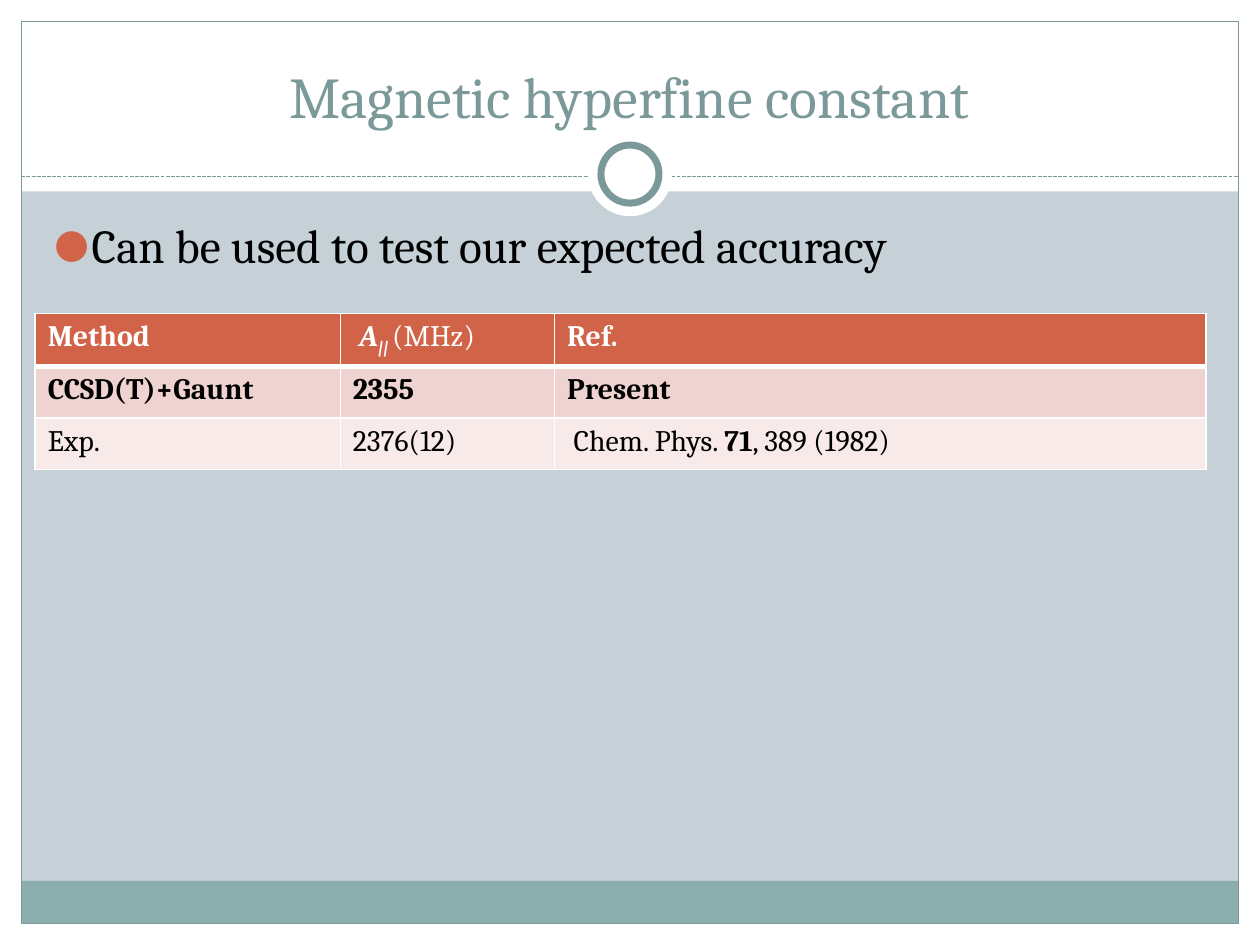
from lxml import etree
from pptx import Presentation
from pptx import util as u
from pptx.dml import color
from pptx.enum import dml, shapes, text
from pptx.oxml import ns

Cm = u.Cm
FONT = "Cambria"
COLORS = {
    "background": "C5D1D7",
    "white": "FFFFFF",
    "black": "000000",
    "teal": "7C999A",
    "footer": "8CADAE",
    "accent": "D16349",
    "band_dark": "EED3D0",
    "band_light": "F7EAE9",
}
PAGE = (0, 0, 25.4, 19.05)
TITLE = (0.84, 0.64, 23.7, 2.11)
BODY = (0.84, 4.24, 23.62, 12.7)
TABLE = (0.71, 6.32, 23.6, 3.1)
COLUMNS = (6.15, 4.32, 13.13)

BOLD = {"bold": True}
ROWS = [
    ("accent", "white", [
        [("Method", BOLD)],
        [(" A", {"bold": True, "italic": True}),
         ("|| ", {"bold": True, "italic": True, "baseline": -25}),
         ("(MHz)", {})],
        [("Ref.", BOLD)],
    ]),
    ("band_dark", "black", [
        [("CCSD(T)+Gaunt", BOLD)], [("2355", BOLD)], [("Present", BOLD)],
    ]),
    ("band_light", "black", [
        [("Exp.", {})],
        [("2376(12)", {})],
        [(" Chem. Phys. ", {}), ("71", BOLD), (", 389 (1982)", {})],
    ]),
]


def rgb(name):
    return color.RGBColor.from_string(COLORS[name])


def add_xml(parent, tag, **attributes):
    return etree.SubElement(parent, ns.qn(tag), attributes)


def add_span(para, words, size=17, tint="black", bold=False, italic=False, baseline=0):
    span = para.add_run()
    span.text = words
    font = span.font
    font.name, font.size, font.bold, font.italic = FONT, u.Pt(size), bold, italic
    font.color.rgb = rgb(tint)
    if baseline:
        span._r.get_or_add_rPr().set("baseline", str(baseline * 1000))


def add_block(page, box, fill=None, line=None, width=0.75, kind=shapes.MSO_SHAPE.RECTANGLE):
    block = page.shapes.add_shape(kind, *map(Cm, box))
    block.shadow.inherit = False
    if fill:
        block.fill.solid()
        block.fill.fore_color.rgb = rgb(fill)
    else:
        block.fill.background()
    if line:
        block.line.color.rgb = rgb(line)
        block.line.width = u.Pt(width)
    else:
        block.line.fill.background()


def add_circle(page, center, middle, diameter, **style):
    box = (center - diameter / 2, middle - diameter / 2, diameter, diameter)
    add_block(page, box, kind=shapes.MSO_SHAPE.OVAL, **style)


def add_frame(page, box, margin=0.43, header=3.86, footer=0.86, divider=3.56):
    left, top, width, height = box
    right, bottom = left + width, top + height
    inner = width - 2 * margin
    for strip in (
        (left, bottom - margin, width, margin),
        (left, top, width, header),
        (left, top, margin, height),
        (right - margin, top, margin, height),
    ):
        add_block(page, strip, fill="white")
    add_block(page, (left + margin, bottom - margin - footer, inner, footer), fill="footer")
    add_block(page, (left + margin, top + margin, inner, height - 2 * margin), line="teal")

    rule = page.shapes.add_connector(
        shapes.MSO_CONNECTOR.STRAIGHT,
        Cm(left + margin), Cm(top + divider), Cm(right - margin), Cm(top + divider))
    rule.line.color.rgb = rgb("teal")
    rule.line.width = u.Pt(0.75)
    rule.line.dash_style = dml.MSO_LINE.SQUARE_DOT
    add_xml(rule._element.spPr, "a:effectLst")

    center, middle = left + width / 2, top + 3.51
    add_circle(page, center, middle, 1.7, fill="white")
    add_circle(page, center, middle, 1.17, fill="white", line="teal", width=4)


def add_text(page, box, words, anchor, align, **style):
    frame = page.shapes.add_textbox(*map(Cm, box)).text_frame
    frame.word_wrap = True
    frame.vertical_anchor = anchor
    para = frame.paragraphs[0]
    para.alignment = align
    add_span(para, words, **style)
    return para


def add_title(page, box):
    add_text(page, box, "Magnetic hyperfine constant", text.MSO_ANCHOR.BOTTOM,
             text.PP_ALIGN.CENTER, size=33, tint="teal")


def add_body(page, box):
    para = add_text(page, box, "Can be used to test our expected accuracy",
                    text.MSO_ANCHOR.TOP, text.PP_ALIGN.LEFT, size=27)
    para.space_before = u.Pt(5.4)
    settings = para._p.get_or_add_pPr()
    indent = Cm(0.76)
    settings.set("marL", str(indent))
    settings.set("indent", str(-indent))
    add_xml(add_xml(settings, "a:buClr"), "a:srgbClr", val=COLORS["accent"])
    add_xml(settings, "a:buSzPct", val="85000")
    add_xml(settings, "a:buFont", typeface=FONT)
    add_xml(settings, "a:buChar", char="●")


def add_borders(cell, top, bottom):
    settings = cell._tc.get_or_add_tcPr()
    for side, width in (("L", 1), ("R", 1), ("T", top), ("B", bottom)):
        edge = add_xml(settings, f"a:ln{side}", w=str(u.Pt(width)))
        add_xml(add_xml(edge, "a:solidFill"), "a:srgbClr", val=COLORS["white"])


def add_results(page, box):
    table = page.shapes.add_table(len(ROWS), len(COLUMNS), *map(Cm, box)).table
    for column, width in zip(table.columns, COLUMNS):
        column.width = Cm(width)
    for index, (fill, tint, cells) in enumerate(ROWS):
        table.rows[index].height = Cm(box[3] / len(ROWS))
        for cell, spans in zip(table.rows[index].cells, cells):
            add_borders(cell, top=3 if index == 1 else 1, bottom=3 if index == 0 else 1)
            cell.fill.solid()
            cell.fill.fore_color.rgb = rgb(fill)
            for words, style in spans:
                add_span(cell.text_frame.paragraphs[0], words, tint=tint, **style)


def main():
    deck = Presentation()
    deck.slide_width, deck.slide_height = map(Cm, PAGE[2:])
    page = deck.slides.add_slide(deck.slide_layouts[6])
    page.background.fill.solid()
    page.background.fill.fore_color.rgb = rgb("background")
    add_frame(page, PAGE)
    add_title(page, TITLE)
    add_body(page, BODY)
    add_results(page, TABLE)
    deck.save("out.pptx")


if __name__ == "__main__":
    main()
